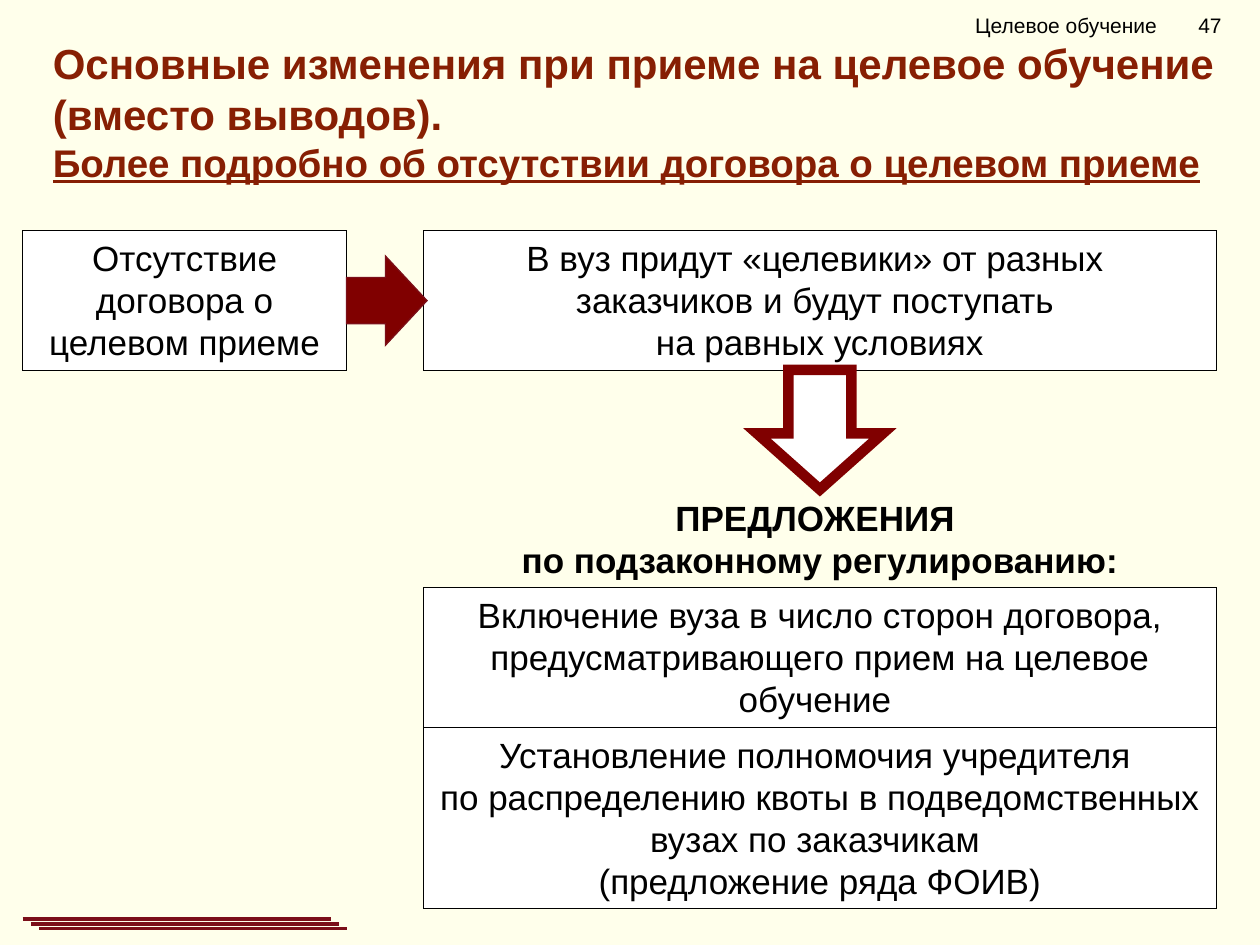
"""Build the slide on the consequences of having no targeted admission contract."""
from lxml import etree
from pptx import Presentation
from pptx.dml.color import RGBColor
from pptx.enum import shapes, text
from pptx.oxml import ns
from pptx.util import Pt

CREAM = RGBColor(0xFF, 0xFF, 0xEB)
WHITE = RGBColor(0xFF, 0xFF, 0xFF)
BLACK = RGBColor(0, 0, 0)
RUST = RGBColor(0x87, 0x1F, 0x03)
MAROON = RGBColor(0x80, 0, 0)
WINE = RGBColor(0x7B, 0x0F, 0x19)
FONT = "Arial"

TITLE = [
    ("Основные изменения при приеме на целевое обучение", 24, False),
    ("(вместо выводов).", 24, False),
    ("Более подробно об отсутствии договора о целевом приеме", 22, True),
]
HEADER = "Целевое обучение\t47"
CAUSE = ["Отсутствие договора о целевом приеме"]
EFFECT = [
    "В вуз придут «целевики» от разных ",
    "заказчиков и будут поступать ",
    "на равных условиях",
]
PROPOSALS_HEADING = ["ПРЕДЛОЖЕНИЯ ", "по подзаконному регулированию:"]
PROPOSALS = [
    (["Включение вуза в число сторон договора, "
      "предусматривающего прием на целевое обучение "], 80),
    (["Установление полномочия учредителя ",
      "по распределению квоты в подведомственных вузах по заказчикам ",
      "(предложение ряда ФОИВ)"], 103.7),
]

LEFT, LEFT_W = 13, 185
RIGHT, RIGHT_W = 242, 453
ROW_TOP, ROW_H = 131.8, 80
HEADING_TOP, HEADING_H = 280, 55.5


def box(*lengths):
    return [Pt(n) for n in lengths]


def style(r, size, color=BLACK, bold=False, underline=False):
    r.font.name, r.font.size = FONT, Pt(size)
    r.font.color.rgb = color
    r.font.bold, r.font.underline = bold, underline


def write(sp, lines, bold=False):
    tf = sp.text_frame
    tf.word_wrap = True
    tf.auto_size = text.MSO_AUTO_SIZE.SHAPE_TO_FIT_TEXT
    tf.vertical_anchor = text.MSO_ANCHOR.TOP
    tf.text = "\n".join(lines)
    for p in tf.paragraphs:
        p.alignment = text.PP_ALIGN.CENTER
        style(p.runs[0], 20, bold=bold)


def add_shape(s, kind, place, fill, line, width):
    sp = s.shapes.add_shape(kind, *box(*place))
    sp.shadow.inherit = False
    sp.fill.solid()
    sp.fill.fore_color.rgb = fill
    sp.line.color.rgb, sp.line.width = line, Pt(width)
    miter = etree.SubElement(sp.line._get_or_add_ln(), ns.qn("a:miter"))
    miter.set("lim", "800000")
    return sp


def add_panel(s, place, lines):
    sp = add_shape(s, shapes.MSO_SHAPE.RECTANGLE, place, WHITE, BLACK, 0.25)
    write(sp, lines)


def add_arrow(s, place, adjustments, fill, line, width, rotation=0):
    sp = add_shape(s, shapes.MSO_SHAPE.RIGHT_ARROW, place, fill, line, width)
    sp.adjustments[0], sp.adjustments[1] = adjustments
    sp.rotation = rotation


def add_title(s):
    sp = s.shapes.title
    sp.left, sp.top, sp.width, sp.height = box(23, 21, 683, 34)
    tf = sp.text_frame
    tf.word_wrap = True
    tf.auto_size = text.MSO_AUTO_SIZE.NONE
    tf.vertical_anchor = text.MSO_ANCHOR.TOP
    tf.text = "\n".join(line for line, _, _ in TITLE)
    for p, (_, size, underline) in zip(tf.paragraphs, TITLE):
        p.alignment = text.PP_ALIGN.LEFT
        style(p.runs[0], size, RUST, True, underline)
    tf.paragraphs[0].line_spacing = 0.9


def add_header(s):
    tf = s.shapes.add_textbox(*box(535.7, 0, 184.3, 29)).text_frame
    tf.word_wrap = True
    tf.vertical_anchor = text.MSO_ANCHOR.MIDDLE
    tf.margin_left = Pt(21.6)
    tf.text = HEADER
    p = tf.paragraphs[0]
    tabs = etree.SubElement(p._p.get_or_add_pPr(), ns.qn("a:tabLst"))
    etree.SubElement(tabs, ns.qn("a:tab"), pos=str(Pt(127.5)), algn="l")
    for r in p.runs:
        style(r, 12)


def add_footer_lines(s):
    for i in range(3):
        x, y = LEFT + 4.6 * i, 525 + 2.8 * i
        sp = s.shapes.add_connector(
            shapes.MSO_CONNECTOR.STRAIGHT, *box(x, y, x + 176, y))
        sp.line.color.rgb, sp.line.width = WINE, Pt(2.25)
        etree.SubElement(sp._element.spPr, ns.qn("a:effectLst"))


def main():
    prs = Presentation()
    prs.slide_width, prs.slide_height = box(720, 540)
    s = prs.slides.add_slide(prs.slide_layouts[5])
    s.background.fill.solid()
    s.background.fill.fore_color.rgb = CREAM

    add_title(s)
    add_header(s)
    add_footer_lines(s)
    add_panel(s, (LEFT, ROW_TOP, LEFT_W, ROW_H), CAUSE)
    add_panel(s, (RIGHT, ROW_TOP, RIGHT_W, ROW_H), EFFECT)
    add_arrow(s, (LEFT + LEFT_W, ROW_TOP + ROW_H / 2 - 25.5, 46, 51),
              (0.52, 0.516), MAROON, WINE, 0.75)

    y = HEADING_TOP + HEADING_H
    for lines, height in PROPOSALS:
        add_panel(s, (RIGHT, y, RIGHT_W, height), lines)
        y += height

    add_arrow(s, (RIGHT + RIGHT_W / 2 - 34.2, 209.5, 68.4, 72),
              (0.5, 0.469), WHITE, MAROON, 6, rotation=90)
    heading = s.shapes.add_textbox(*box(RIGHT, HEADING_TOP, RIGHT_W, HEADING_H))
    write(heading, PROPOSALS_HEADING, bold=True)
    prs.save("out.pptx")


if __name__ == "__main__":
    main()
